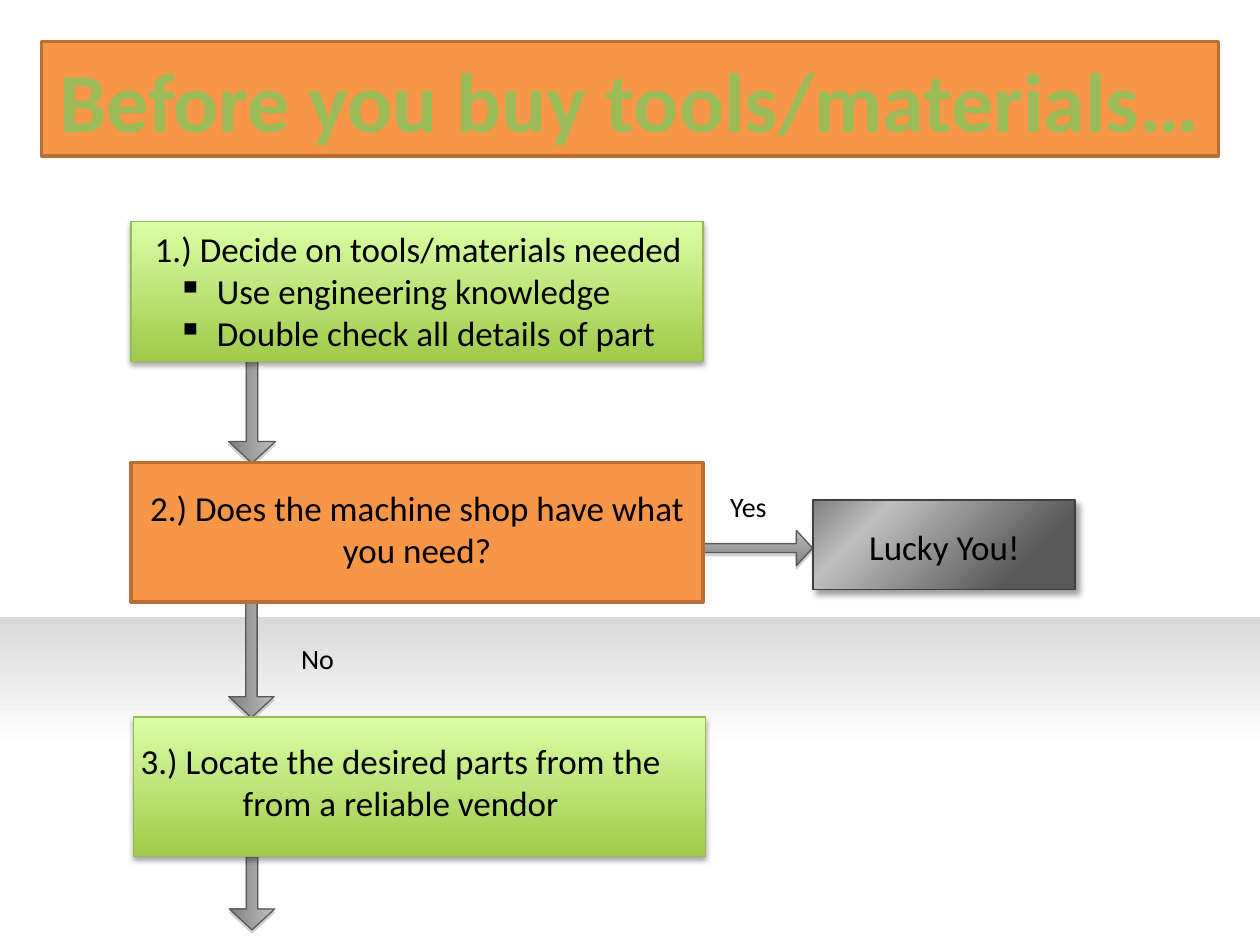
from lxml.etree import SubElement
from pptx import Presentation
from pptx.dml.color import RGBColor
from pptx.enum.shapes import MSO_SHAPE
from pptx.enum.text import MSO_ANCHOR, MSO_AUTO_SIZE, PP_ALIGN
from pptx.oxml.ns import qn
from pptx.util import Inches, Pt

BLACK = RGBColor(0x00, 0x00, 0x00)
WHITE = RGBColor(0xFF, 0xFF, 0xFF)
ORANGE = RGBColor(0xF7, 0x96, 0x46)
ORANGE_EDGE = RGBColor(0xB7, 0x6F, 0x34)
GREEN = RGBColor(0x9B, 0xBB, 0x59)
GREEN_DARK = RGBColor(0xA0, 0xCA, 0x4A)
GREEN_LIGHT = RGBColor(0xDA, 0xFF, 0xA5)
GREEN_EDGE = RGBColor(0x98, 0xB9, 0x55)
PALE = RGBColor(0xD9, 0xD9, 0xD9)
SILVER = RGBColor(0xBF, 0xBF, 0xBF)
GRAY = RGBColor(0x80, 0x80, 0x80)
ARROW_GRAY = RGBColor(0x7F, 0x7F, 0x7F)
DARK = RGBColor(0x59, 0x59, 0x59)
DARKER = RGBColor(0x40, 0x40, 0x40)

BOX_W, BOX_H = 4.54, 1.11


def add_block(kind, x, y, w, h, stops=None, angle=0, fill=None, line=None, shadow=None):
    """stops: (percent, colour); line: (colour, pt); shadow: (colour, alpha %, blur, distance, angle)."""
    sp = s.shapes.add_shape(kind, Inches(x), Inches(y), Inches(w), Inches(h))
    sp.shadow.inherit = False
    if stops:
        sp.fill.gradient()
        grad = sp.element.spPr.find(qn("a:gradFill"))
        for child in list(grad):
            grad.remove(child)
        gs_list = SubElement(grad, qn("a:gsLst"))
        for pos, color in stops:
            gs = SubElement(gs_list, qn("a:gs"), pos=str(pos * 1000))
            SubElement(gs, qn("a:srgbClr"), val=str(color))
        SubElement(grad, qn("a:lin"), ang=str(angle * 60000), scaled="0")
    else:
        sp.fill.solid()
        sp.fill.fore_color.rgb = fill
    if line:
        sp.line.color.rgb, sp.line.width = line[0], Pt(line[1])
    else:
        sp.line.fill.background()
    if shadow:
        color, alpha, blur, dist, direction = shadow
        effects = sp.element.spPr.find(qn("a:effectLst"))
        outer = SubElement(effects, qn("a:outerShdw"), blurRad=str(Pt(blur)), dist=str(Pt(dist)),
                           dir=str(direction * 60000), algn="ctr", rotWithShape="0")
        clr = SubElement(outer, qn("a:srgbClr"), val=str(color))
        SubElement(clr, qn("a:alpha"), val=str(alpha * 1000))
    return sp


def write(tf, text, size=20, color=BLACK, bold=False, align=PP_ALIGN.CENTER, bullet=None, first=True):
    tf.word_wrap = True
    p = tf.paragraphs[0] if first else tf.add_paragraph()
    p.alignment = align
    if bullet:
        p.level = 1
        pPr = p._p.get_or_add_pPr()
        pPr.set("marL", str(Inches(0.5)))
        pPr.set("indent", str(Inches(-0.25)))
        SubElement(pPr, qn("a:buChar"), char=bullet)
    r = p.add_run()
    r.text = text
    r.font.name, r.font.size, r.font.bold = "Calibri", Pt(size), bold
    r.font.color.rgb = color


prs = Presentation()
prs.slide_width, prs.slide_height = Inches(10), Inches(7.5)
s = prs.slides.add_slide(prs.slide_layouts[5])

# Shaded floor of the background
floor = add_block(MSO_SHAPE.RECTANGLE, 0, 4.9, 10, 2.6, [(61, WHITE), (100, PALE)], 270)
s.shapes._spTree.insert(2, floor.element)

# Title
title = s.shapes.title
title.left, title.top, title.width, title.height = Inches(0.33), Inches(0.33), Inches(9.34), Inches(0.91)
title.fill.solid()
title.fill.fore_color.rgb = ORANGE
title.line.color.rgb, title.line.width = ORANGE_EDGE, Pt(2)
tf = title.text_frame
tf.auto_size = MSO_AUTO_SIZE.NONE
tf.vertical_anchor = MSO_ANCHOR.MIDDLE
write(tf, "Before you buy tools/materials…", size=48, color=GREEN, bold=True)

# Block arrows between the steps
for x, y, w, h, rotation in [
    (5.59, 4.21, 0.86, 0.28, 0),
    (1.54, 5.06, 0.91, 0.36, 90),
    (1.54, 3.03, 0.92, 0.37, 90),
    (1.71, 6.91, 0.58, 0.36, 90),
]:
    arrow = add_block(MSO_SHAPE.RIGHT_ARROW, x, y, w, h, [(0, SILVER), (100, ARROW_GRAY)], 90,
                      line=(DARK, 0.75), shadow=(GRAY, 35, 0, 1.8, 90))
    arrow.adjustments[0], arrow.adjustments[1] = 0.25, 0.46
    arrow.rotation = rotation

# Step boxes
for x, y in [(1.04, 1.76), (1.06, 5.69)]:
    add_block(MSO_SHAPE.RECTANGLE, x, y, BOX_W, BOX_H, [(0, GREEN_DARK), (100, GREEN_LIGHT)], 270,
              line=(GREEN_EDGE, 0.75), shadow=(BLACK, 35, 3.1, 1.8, 90))
add_block(MSO_SHAPE.RECTANGLE, 1.04, 3.67, BOX_W, BOX_H, fill=ORANGE, line=(ORANGE_EDGE, 2))
add_block(MSO_SHAPE.RECTANGLE, 6.45, 3.97, 2.08, 0.71, [(22, DARK), (77, SILVER), (100, GRAY)], 225,
          line=(DARKER, 1), shadow=(BLACK, 40, 4, 3, 45))

# Step texts and branch labels
for x, y, w, h, size, text, bullets in [
    (1.06, 1.76, 4.52, 1.11, 20, "1.) Decide on tools/materials needed",
     [" Use engineering knowledge", " Double check all details of part"]),
    (1.04, 3.81, BOX_W, 0.77, 20, "2.) Does the machine shop have what you need?", []),
    (0.91, 5.82, BOX_W, 0.77, 20, "3.) Locate the desired parts from the from a reliable vendor", []),
    (6.71, 4.12, 1.57, 0.44, 20, "Lucky You!", []),
    (5.59, 3.84, 0.7, 0.37, 16, "Yes", []),
    (2.17, 5.04, 0.7, 0.37, 16, "No", []),
]:
    tf = s.shapes.add_textbox(Inches(x), Inches(y), Inches(w), Inches(h)).text_frame
    write(tf, text, size=size)
    for item in bullets:
        write(tf, item, size=size, align=PP_ALIGN.LEFT, bullet="▪", first=False)

prs.save("out.pptx")
